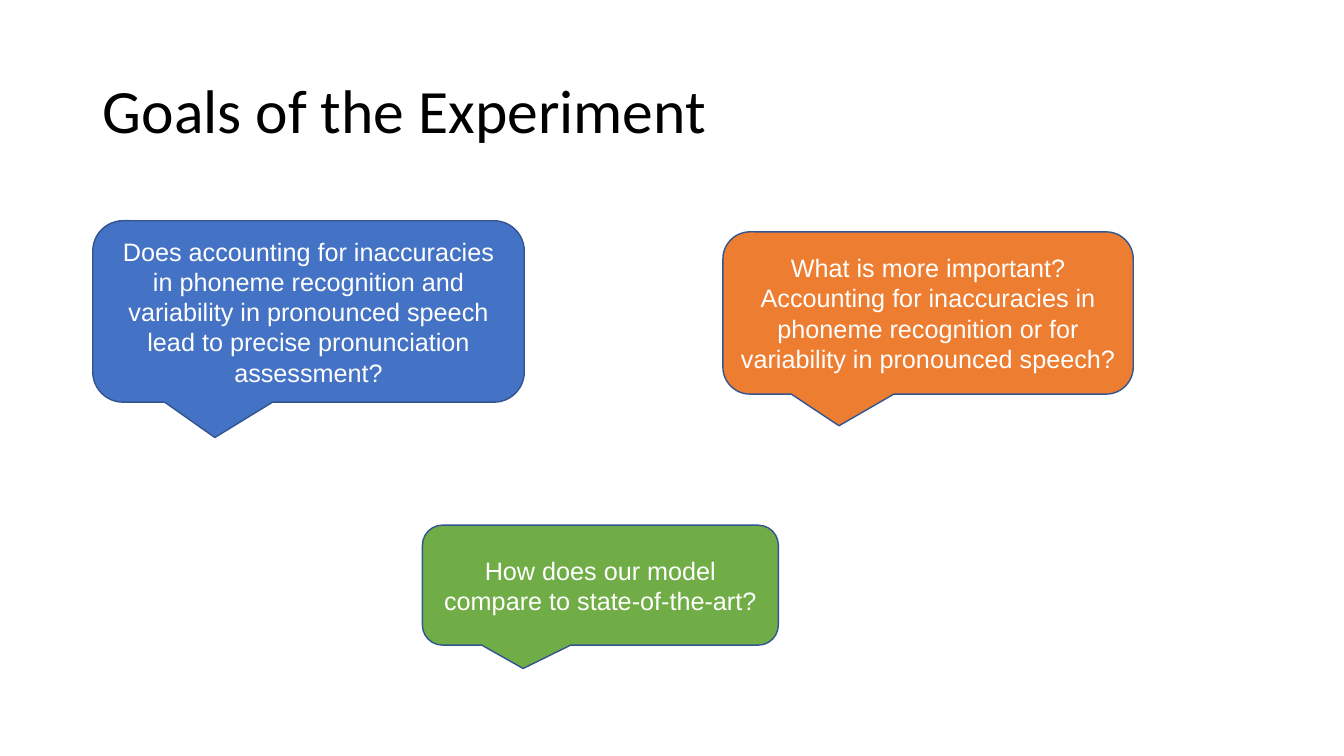
import pptx
import pptx.dml.color
import pptx.enum.shapes
import pptx.enum.text
import pptx.util
from pptx.util import Inches

ALIGN = pptx.enum.text.PP_ALIGN
CALLOUT = pptx.enum.shapes.MSO_SHAPE.ROUNDED_RECTANGULAR_CALLOUT
CALLOUT_ADJUSTMENTS = (-0.217, 0.695, 0.167)
OUTLINE = "325491"

CALLOUTS = [
    ("Does accounting for inaccuracies in phoneme recognition and variability "
     "in pronounced speech lead to precise pronunciation assessment?",
     (0.92, 2.19, 4.28, 1.8), "4472C4"),
    ("How does our model compare to state-of-the-art?",
     (4.19, 5.21, 3.53, 1.19), "70AD47"),
    ("What is more important? Accounting for inaccuracies in phoneme "
     "recognition or for variability in pronounced speech?",
     (7.17, 2.3, 4.07, 1.61), "ED7D31"),
]


def color(hex_string):
    return pptx.dml.color.RGBColor.from_string(hex_string)


def write_text(shape, text, *, font, size, ink, align, line_spacing=1.0):
    frame = shape.text_frame
    frame.word_wrap = True
    frame.vertical_anchor = pptx.enum.text.MSO_ANCHOR.MIDDLE
    para = frame.paragraphs[0]
    para.alignment = align
    para.line_spacing = line_spacing
    span = para.add_run()
    span.text = text
    span.font.name = font
    span.font.size = pptx.util.Pt(size)
    span.font.color.rgb = color(ink)


def add_title(page, text):
    title = page.shapes.title
    title.left, title.top = Inches(0.92), Inches(0.4)
    title.width, title.height = Inches(11.5), Inches(1.45)
    write_text(title, text, font="Calibri", size=44, ink="000000",
               align=ALIGN.LEFT, line_spacing=0.9)


def add_callout(page, text, place, fill):
    box = page.shapes.add_shape(CALLOUT, *map(Inches, place))
    for index, value in enumerate(CALLOUT_ADJUSTMENTS):
        box.adjustments[index] = value
    box.shadow.inherit = False
    box.fill.solid()
    box.fill.fore_color.rgb = color(fill)
    box.line.color.rgb = color(OUTLINE)
    box.line.width = pptx.util.Pt(1)
    write_text(box, text, font="Arial", size=18, ink="FFFFFF",
               align=ALIGN.CENTER)


def main():
    deck = pptx.Presentation()
    deck.slide_width, deck.slide_height = Inches(13.33), Inches(7.5)
    title_only = deck.slide_layouts.get_by_name("Title Only")
    page = deck.slides.add_slide(title_only)
    add_title(page, "Goals of the Experiment")
    for text, place, fill in CALLOUTS:
        add_callout(page, text, place, fill)
    deck.save("out.pptx")


if __name__ == "__main__":
    main()
